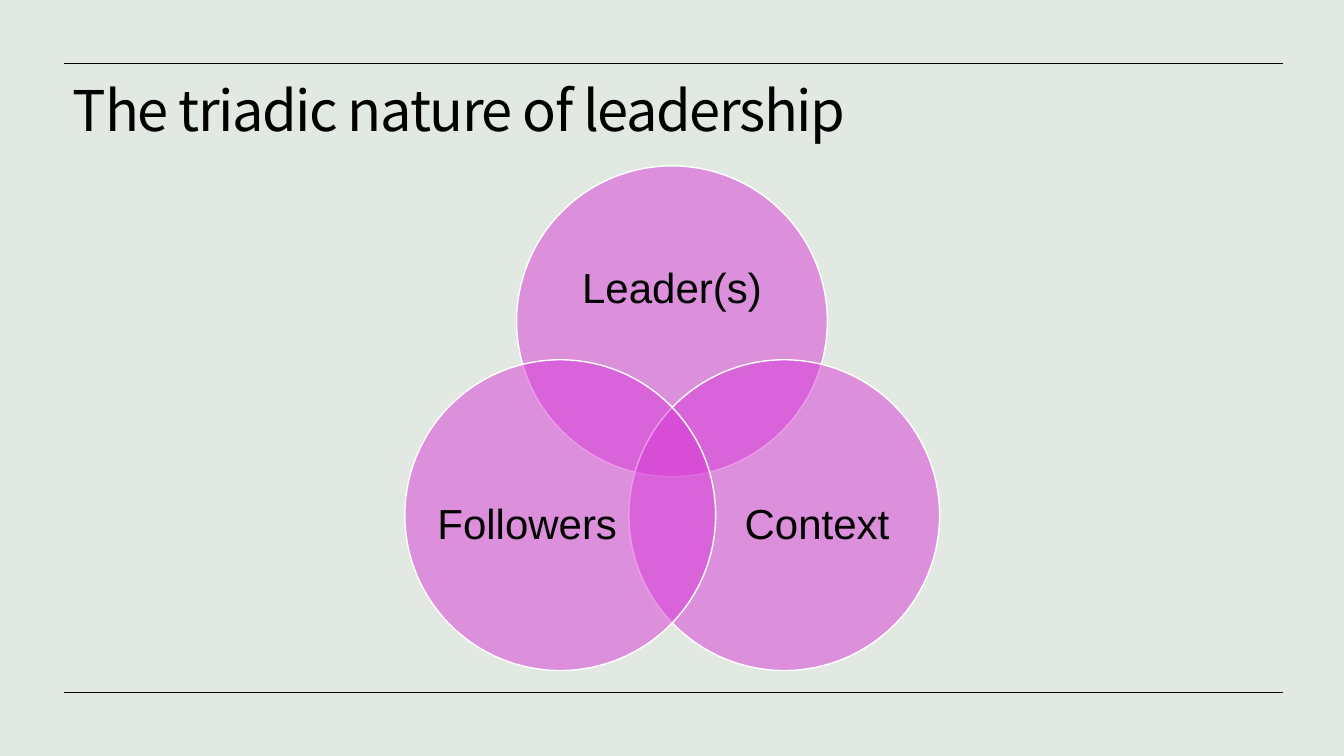
import lxml.etree
import pptx
import pptx.dml.color
import pptx.enum.shapes
import pptx.enum.text
import pptx.oxml.ns
import pptx.util

Pt = pptx.util.Pt
qn = pptx.oxml.ns.qn
Align = pptx.enum.text.PP_ALIGN
Anchor = pptx.enum.text.MSO_ANCHOR

BLACK, WHITE, SAGE, ORCHID = "000000", "FFFFFF", "E2E8E2", "D838D6"
DIAMETER = 222


def rgb(value):
    return pptx.dml.color.RGBColor.from_string(value)


def add_text(shapes, text, left, top, width, height, *, size, font,
             color=BLACK, align=Align.LEFT, anchor=Anchor.TOP,
             margins=None, after=0, tracking=None):
    """Add a text box; tracking is letter spacing in hundredths of a point."""
    sp = shapes.add_textbox(Pt(left), Pt(top), Pt(width), Pt(height))
    tf = sp.text_frame
    tf.word_wrap = True
    tf.vertical_anchor = anchor
    if margins is not None:
        tf.margin_left = tf.margin_right = Pt(margins)
        tf.margin_top = tf.margin_bottom = Pt(margins)
    p = tf.paragraphs[0]
    p.alignment = align
    p.line_spacing = 0.9
    p.space_after = Pt(after)
    r = p.add_run()
    r.text = text
    r.font.size = Pt(size)
    r.font.name = font
    r.font.color.rgb = rgb(color)
    rpr = r.font._element
    lxml.etree.SubElement(rpr, qn("a:ea")).set("typeface", font)
    if tracking is not None:
        rpr.set("spc", str(tracking))


def add_rule(shapes, y):
    line = shapes.add_connector(pptx.enum.shapes.MSO_CONNECTOR.STRAIGHT,
                                Pt(916.5), Pt(y), Pt(45.5), Pt(y))
    line.line.color.rgb = rgb(BLACK)
    line.line.width = Pt(0.5)
    lxml.etree.SubElement(line._element.spPr, qn("a:effectLst"))


def add_circle(shapes, left, top):
    """Add a half-transparent circle of the Venn diagram."""
    sp = shapes.add_shape(pptx.enum.shapes.MSO_SHAPE.OVAL,
                          Pt(left), Pt(top), Pt(DIAMETER), Pt(DIAMETER))
    sp.shadow.inherit = False
    sp.fill.solid()
    sp.fill.fore_color.rgb = rgb(ORCHID)
    fill = sp._element.spPr.find(qn("a:solidFill"))
    lxml.etree.SubElement(fill[0], qn("a:alpha")).set("val", "50000")
    sp.line.color.rgb = rgb(WHITE)
    sp.line.width = Pt(1)


def add_venn(shapes):
    venn = shapes.add_group_shape().shapes
    # Label, circle's left and top, label's left, top, width and height
    circles = [
        ("Leader(s)", (369, 118.5), (398.6, 157.7, 162.8, 99.4)),
        ("Context", (449.2, 257), (517, 314.6, 133.2, 121.7)),
        ("Followers", (289.2, 257), (310, 314.6, 133.2, 121.7)),
    ]
    for label, corner, label_box in circles:
        add_circle(venn, *corner)
        add_text(venn, label, *label_box, size=30, font="Arial",
                 align=Align.CENTER, anchor=Anchor.MIDDLE,
                 margins=0, after=10.5)


def main():
    prs = pptx.Presentation()
    prs.slide_width, prs.slide_height = Pt(960), Pt(540)
    s = prs.slides.add_slide(prs.slide_layouts[6])
    s.background.fill.solid()
    s.background.fill.fore_color.rgb = rgb(SAGE)
    for y in (45, 494.5):
        add_rule(s.shapes, y)
    add_venn(s.shapes)
    add_text(s.shapes, "The triadic nature of leadership",
             45, 56.2, 869.8, 91.4, size=40, font="Noto Sans CJK KR",
             tracking=-100)
    prs.save("out.pptx")


if __name__ == "__main__":
    main()
